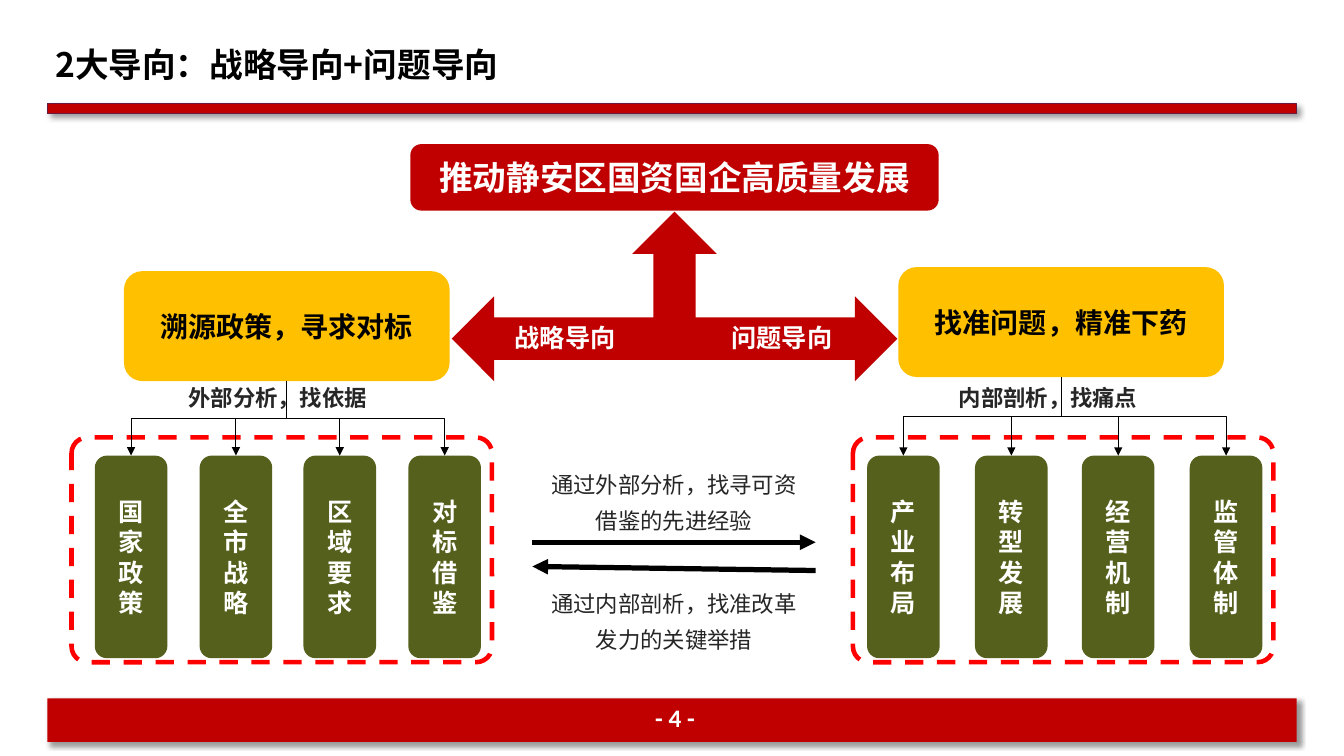
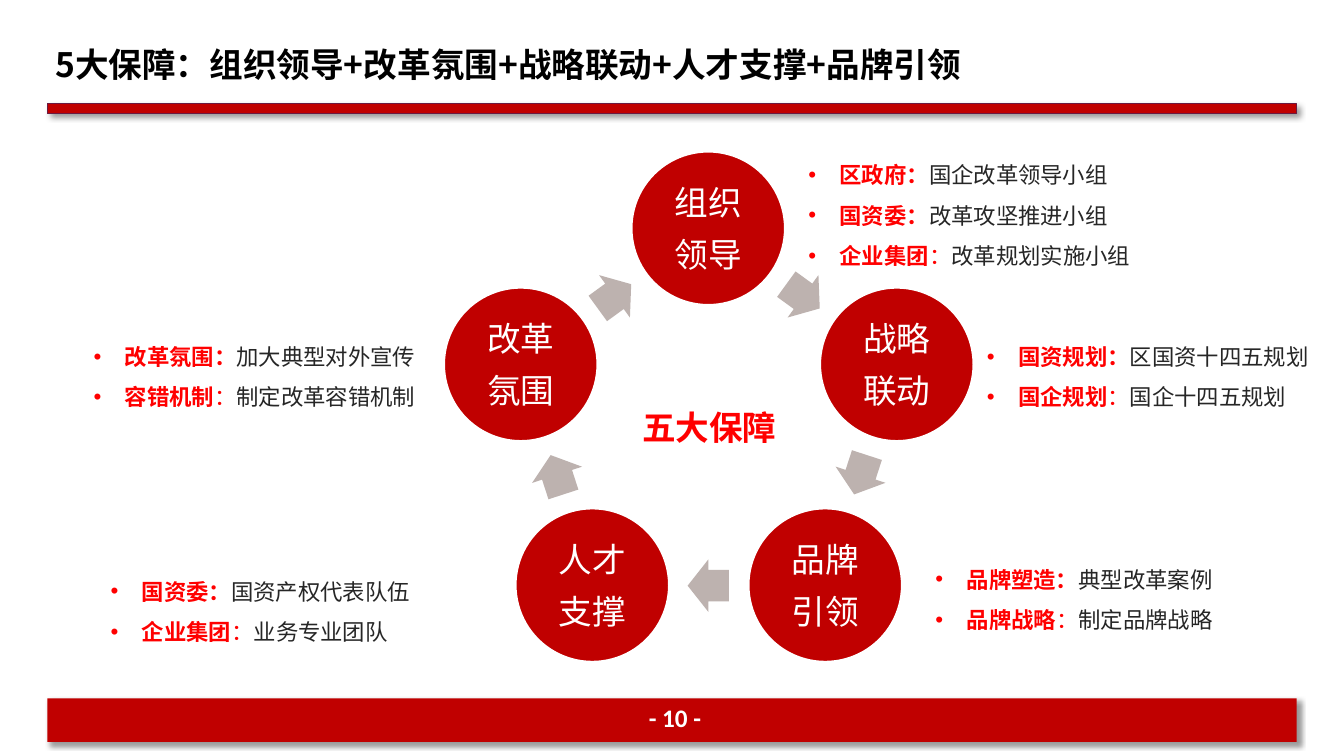
import dataclasses
import math

import lxml.etree
import pptx
import pptx.dml.color
import pptx.enum.dml
import pptx.enum.shapes
import pptx.enum.text
import pptx.oxml.ns
import pptx.util

EMU_PER_PX = 9144
SHAPES = pptx.enum.shapes.MSO_SHAPE
CONNECTORS = pptx.enum.shapes.MSO_CONNECTOR
ALIGN = pptx.enum.text.PP_ALIGN
ANCHOR = pptx.enum.text.MSO_ANCHOR
qn = pptx.oxml.ns.qn


@dataclasses.dataclass(frozen=True)
class Theme:
    font: str = "Noto Sans CJK SC"
    number_font: str = "Calibri"
    red: str = "C00000"
    bright_red: str = "FF0000"
    amber: str = "FFC000"
    olive: str = "55601C"
    grey: str = "BDB2AF"
    plum: str = "6A1A41"
    ink: str = "262626"
    black: str = "000000"
    white: str = "FFFFFF"
    heading: int = 24
    subheading: int = 20
    label: int = 18
    body: int = 16


THEME = Theme()
TITLE = {"size": THEME.heading, "color": THEME.black, "bold": True, "align": ALIGN.JUSTIFY}
PAGE_NUMBER = {"size": THEME.label, "color": THEME.white, "bold": True, "font": THEME.number_font}
GOAL = {"size": THEME.heading, "color": THEME.white, "bold": True}
APPROACH = {"size": THEME.subheading, "color": THEME.black, "bold": True}
LABEL = {"size": THEME.label, "color": THEME.white, "bold": True}
CAPTION = {"size": THEME.body, "color": THEME.ink, "bold": True}
EXCHANGE = {"size": THEME.body, "color": THEME.ink, "line_spacing": 1.35}
CIRCLE = {"size": THEME.heading, "color": THEME.white, "space_after": pptx.util.Pt(8.4)}
HUB = {"size": THEME.heading, "color": THEME.bright_red, "bold": True, "line_spacing": 1.5}
NOTE = {"size": THEME.body, "color": THEME.ink, "align": ALIGN.JUSTIFY, "line_spacing": 1.5}

DIRECTIONS = [
    {"frame": (71, 434, 417, 223), "approach": (52, -165), "caption": 60, "first": 23, "span": 311,
     "heading": "溯源政策，寻求对标", "note": "外部分析，找依据",
     "pillars": ["国家政策", "全市战略", "区域要求", "对标借鉴"]},
    {"frame": (846, 434, 417, 223), "approach": (45, -169), "caption": 49, "first": 14, "span": 320,
     "heading": "找准问题，精准下药", "note": "内部剖析，找痛点",
     "pillars": ["产业布局", "转型发展", "经营机制", "监管体制"]},
]
GUARANTEES = ["组织领导", "战略联动", "品牌引领", "人才支撑", "改革氛围"]
GUARANTEE_NOTES = [
    ((792, 142), [("区政府", "国企改革领导小组"), ("国资委", "改革攻坚推进小组"),
                  ("企业集团", "改革规划实施小组")]),
    ((83, 322), [("改革氛围", "加大典型对外宣传"), ("容错机制", "制定改革容错机制")]),
    ((969, 322), [("国资规划", "区国资十四五规划"), ("国企规划", "国企十四五规划")]),
    ((100, 555), [("国资委", "国资产权代表队伍"), ("企业集团", "业务专业团队")]),
    ((918, 543), [("品牌塑造", "典型改革案例"), ("品牌战略", "制定品牌战略")]),
]


def px(length):
    return pptx.util.Emu(round(length) * EMU_PER_PX)


def rgb(color):
    return pptx.dml.color.RGBColor.from_string(color)


def apply(target, formats):
    for name, value in formats.items():
        setattr(target, name, value)


def add_xml(parent, tag, **attributes):
    return lxml.etree.SubElement(parent, qn(tag), attributes)


def write(shape, lines, style, margins=None, wrap=True, anchor=ANCHOR.TOP):
    """Fill a shape with lines; a line is a string or a list of (text, style changes)."""
    frame = shape.text_frame
    apply(frame, {"word_wrap": wrap, "vertical_anchor": anchor})
    if margins:
        horizontal, vertical = map(px, margins)
        apply(frame, {"margin_left": horizontal, "margin_right": horizontal,
                      "margin_top": vertical, "margin_bottom": vertical})
    for index, line in enumerate(lines):
        paragraph = frame.add_paragraph() if index else frame.paragraphs[0]
        apply(paragraph, {"alignment": style.get("align", ALIGN.CENTER),
                          "line_spacing": style.get("line_spacing"),
                          "space_after": style.get("space_after")})
        for text, changes in [(line, {})] if isinstance(line, str) else line:
            look = {**style, **changes}
            run = paragraph.add_run()
            run.text = text
            name = look.get("font", THEME.font)
            apply(run.font, {"size": pptx.util.Pt(look["size"]),
                             "bold": look.get("bold", False), "name": name})
            run.font.color.rgb = rgb(look["color"])
            add_xml(run.font._element, "a:ea", typeface=name)
    return frame


def add_text(slide, box, lines, style, **options):
    return write(slide.shapes.add_textbox(*map(px, box)), lines, style, **options)


def add_shape(slide, kind, box, fill=None, line=None, weight=1, adjustments=()):
    shape = slide.shapes.add_shape(kind, *map(px, box))
    shape.shadow.inherit = False
    if fill:
        shape.fill.solid()
        shape.fill.fore_color.rgb = rgb(fill)
    else:
        shape.fill.background()
    if line:
        shape.line.color.rgb = rgb(line)
        shape.line.width = pptx.util.Pt(weight)
    else:
        shape.line.fill.background()
    for index, value in enumerate(adjustments):
        shape.adjustments[index] = value
    return shape


def add_block(slide, box, fill, lines, style):
    """Rounded box with centred text."""
    shape = add_shape(slide, SHAPES.ROUNDED_RECTANGLE, box, fill)
    write(shape, lines, style, margins=(9, 9), wrap=False, anchor=ANCHOR.MIDDLE)
    return shape


def add_arrow(slide, kind, start, end, weight):
    connector = slide.shapes.add_connector(kind, *map(px, (*start, *end)))
    connector.line.color.rgb = rgb(THEME.black)
    connector.line.width = pptx.util.Pt(weight)
    add_xml(connector.line._get_or_add_ln(), "a:tailEnd", type="triangle")
    add_xml(connector.element.spPr, "a:effectLst")
    return connector


def add_branch(slide, parent, child):
    """Elbow arrow that leaves the parent's foot downwards and enters the child's top."""
    start_x, start_y = parent.left + parent.width // 2, parent.top + parent.height
    end_x, end_y = child.left + child.width // 2, child.top
    connector = add_arrow(slide, CONNECTORS.ELBOW, (0, 0), (1, 1), 0.75)
    connector.begin_connect(parent, 2)
    connector.end_connect(child, 0)
    width, height = end_y - start_y, abs(end_x - start_x)
    rightwards = end_x > start_x
    apply(connector, {"left": (start_x + end_x - width) // 2,
                      "top": (start_y + end_y - height) // 2,
                      "width": width, "height": height,
                      "rotation": 270 if rightwards else 90})
    apply(connector.element.spPr.xfrm, {"flipH": rightwards, "flipV": False})


def add_band(slide, box, line=None):
    band = add_shape(slide, SHAPES.RECTANGLE, box, THEME.red, line, 0.75)
    effects = band.element.spPr.find(qn("a:effectLst"))
    shadow = add_xml(effects, "a:outerShdw", blurRad=str(pptx.util.Pt(4)),
                     dist=str(pptx.util.Pt(3)), dir="2700000", algn="tl", rotWithShape="0")
    color = add_xml(shadow, "a:srgbClr", val=THEME.black)
    add_xml(color, "a:alpha", val="40000")


def add_page(presentation, title, number):
    """Blank slide with the shared title, rule and footer."""
    slide = presentation.slides.add_slide(presentation.slide_layouts[6])
    add_band(slide, (47, 693, 1239, 43))
    add_text(slide, (625, 693, 89, 38), [f"- {number} -"], PAGE_NUMBER, margins=(8, 4))
    add_band(slide, (47, 103, 1239, 10), THEME.plum)
    add_text(slide, (45, 39, 1246, 50), [title], TITLE, anchor=ANCHOR.MIDDLE)
    return slide


def add_direction(slide, direction):
    """Approach box that branches into four pillars inside a dashed frame."""
    left, top, width, height = direction["frame"]
    frame = add_shape(slide, SHAPES.ROUNDED_RECTANGLE, direction["frame"], line=THEME.bright_red,
                      weight=3.25, adjustments=[0.07])
    frame.line.dash_style = pptx.enum.dml.MSO_LINE.DASH
    shift_x, shift_y = direction["approach"]
    approach = add_block(slide, (left + shift_x, top + shift_y, 323, 109), THEME.amber,
                         [direction["heading"]], APPROACH)
    pitch = direction["span"] / (len(direction["pillars"]) - 1)
    for index, name in enumerate(direction["pillars"]):
        pillar_left = left + direction["first"] + index * pitch
        pillar = add_block(slide, (pillar_left, top + 18, 72, 201), THEME.olive, list(name), LABEL)
        add_branch(slide, approach, pillar)
    add_text(slide, (left + direction["caption"], top - 58, 289, 37), [direction["note"]], CAPTION)


def add_goal(slide, box):
    """Goal box above a three-way arrow with a label on each arm."""
    left, top, width, height = box
    add_shape(slide, SHAPES.LEFT_RIGHT_UP_ARROW, (left + 41, top + 67, 442, 168), THEME.red)
    add_block(slide, (left, top, width, 66), THEME.red, ["推动静安区国资国企高质量发展"], GOAL)
    for offset, text in ((55, "战略导向"), (270, "问题导向")):
        add_text(slide, (left + offset, top + 172, 197, 40), [text], LABEL)


def add_exchange(slide, box):
    """Two opposed arrows, with a sentence above and one below."""
    left, top, width, height = box
    near, far = left + 2, left + width - 2
    add_arrow(slide, CONNECTORS.STRAIGHT, (near, top + 85), (far, top + 85), 3.75)
    add_arrow(slide, CONNECTORS.STRAIGHT, (far, top + 113), (near, top + 109), 3.75)
    for offset, text in ((0, "通过外部分析，找寻可资借鉴的先进经验"),
                         (height - 79, "通过内部剖析，找准改革发力的关键举措")):
        add_text(slide, (left, top + offset, width, 79), [text], EXCHANGE)


def add_cycle(slide, center, radius, names):
    """Circles on a ring, with an arrow halfway between each pair."""
    step = 360 / len(names)

    def centered_box(angle, distance, width, height):
        x = center[0] + distance * math.sin(math.radians(angle))
        y = center[1] - distance * math.cos(math.radians(angle))
        return x - width / 2, y - height / 2, width, height

    for index, name in enumerate(names):
        angle = index * step
        circle = add_shape(slide, SHAPES.OVAL, centered_box(angle, radius, 153, 153),
                           THEME.red, THEME.white, 2)
        write(circle, [name[:2], name[2:]], CIRCLE, margins=(3, 3), anchor=ANCHOR.MIDDLE)
        middle = angle + step / 2
        chord = radius * math.cos(math.radians(step / 2))
        arrow = add_shape(slide, SHAPES.RIGHT_ARROW, centered_box(middle, chord, 41, 52),
                          THEME.grey, adjustments=[0.6, 0.5])
        arrow.rotation = middle
    add_text(slide, (center[0] - 79, center[1] - 43, 159, 68), ["五大保障"], HUB)


def add_notes_list(slide, position, items):
    """Bulleted list of red labels with details; the last colon is not bold."""
    red = {"color": THEME.bright_red}
    lines = [[(label, {**red, "bold": True}),
              ("：", {**red, "bold": index < len(items) - 1}),
              (detail, {})] for index, (label, detail) in enumerate(items)]
    frame = add_text(slide, (*position, 360, 91), lines, NOTE)
    for paragraph in frame.paragraphs:
        properties = paragraph._p.get_or_add_pPr()
        properties.set("marL", str(px(31)))
        properties.set("indent", str(-px(31)))
        add_xml(properties, "a:buFont", typeface="Arial")
        add_xml(properties, "a:buChar", char="•")


def build_directions(presentation):
    slide = add_page(presentation, "2大导向：战略导向+问题导向", 4)
    add_goal(slide, (407, 143, 524, 235))
    for direction in DIRECTIONS:
        add_direction(slide, direction)
    add_exchange(slide, (526, 453, 285, 197))


def build_guarantees(presentation):
    slide = add_page(presentation, "5大保障：组织领导+改革氛围+战略联动+人才支撑+品牌引领", 10)
    add_cycle(slide, (703, 422), 196, GUARANTEES)
    for position, items in GUARANTEE_NOTES:
        add_notes_list(slide, position, items)


def main():
    presentation = pptx.Presentation()
    apply(presentation, {"slide_width": px(1333), "slide_height": px(750)})
    build_directions(presentation)
    build_guarantees(presentation)
    presentation.save("out.pptx")


if __name__ == "__main__":
    main()
